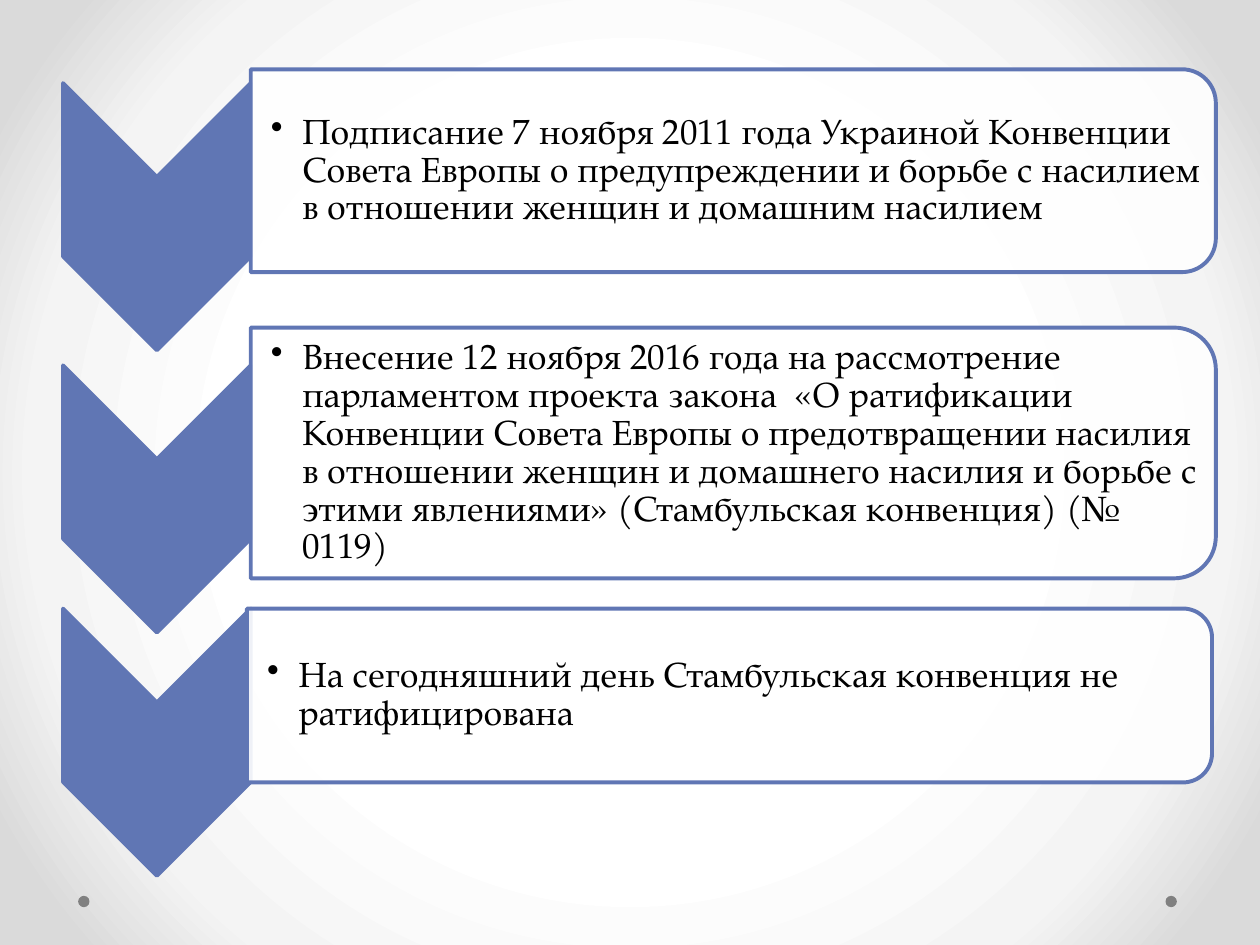
import math

from lxml import etree
from pptx import Presentation
from pptx.dml.color import RGBColor
from pptx.enum.shapes import MSO_SHAPE
from pptx.enum.text import MSO_ANCHOR, PP_ALIGN
from pptx.oxml import parse_xml
from pptx.oxml.ns import nsdecls, qn
from pptx.util import Inches, Pt

OVAL = MSO_SHAPE.OVAL
MIDDLE = MSO_ANCHOR.MIDDLE
LEFT = PP_ALIGN.LEFT

BLUE = RGBColor(0x60, 0x76, 0xB4)
WHITE = RGBColor(0xFF, 0xFF, 0xFF)
BLACK = RGBColor(0x00, 0x00, 0x00)
GREY = RGBColor(0x80, 0x80, 0x80)
BACKGROUND_STOPS = [(50, "FFFFFF"), (76, "F4F4F4"), (92, "DADADA")]
FONT = "TeX Gyre Pagella"

CHEVRON_LEFT, CHEVRON_WIDTH, CHEVRON_HEIGHT = 0.5, 1.49, 2.12
CARD_WIDTH = 7.66
ARC_STEPS = 16

# Chevron top, card left, card top, card height, card inset, text
STEPS = [
    (0.66, 1.99, 0.55, 1.61, 0.09,
     "Подписание 7 ноября 2011 года Украиной Конвенции Совета Европы "
     "о предупреждении и борьбе с насилием в отношении женщин и домашним насилием"),
    (2.9, 1.99, 2.6, 1.99, 0.11,
     "Внесение 12 ноября 2016 года на рассмотрение парламентом проекта закона  "
     "«О ратификации Конвенции Совета Европы о предотвращении насилия "
     "в отношении женщин и домашнего насилия и борьбе с этими явлениями» "
     "(Стамбульская конвенция) (№ 0119)"),
    (4.83, 1.96, 4.83, 1.38, 0.08,
     "На сегодняшний день Стамбульская конвенция не ратифицирована"),
]


def set_background(page):
    stops = "".join(
        f'<a:gs pos="{position * 1000}"><a:srgbClr val="{color}"/></a:gs>'
        for position, color in BACKGROUND_STOPS)
    background = parse_xml(
        f'<p:bg {nsdecls("p", "a")}><p:bgPr><a:gradFill rotWithShape="1">'
        f'<a:gsLst>{stops}</a:gsLst><a:path path="circle">'
        '<a:fillToRect l="50000" t="50000" r="50000" b="50000"/></a:path>'
        '</a:gradFill><a:effectLst/></p:bgPr></p:bg>')
    page.element.cSld.insert(0, background)


def add_outline(page, points, fill):
    """Draw a closed outline through points given in inches."""
    corners = [(Inches(x), Inches(y)) for x, y in points]
    builder = page.shapes.build_freeform(*corners[0], scale=1.0)
    builder.add_line_segments(corners[1:], close=True)
    shape = builder.convert_to_shape()
    shape.shadow.inherit = False
    shape.fill.solid()
    shape.fill.fore_color.rgb = fill
    shape.line.color.rgb = BLUE
    shape.line.width = Pt(2.25)
    etree.SubElement(shape.line._get_or_add_ln(), qn("a:round"))
    return shape


def add_chevron(page, left, top, width, height):
    right, middle, notch = left + width, left + width / 2, width / 2
    bottom = top + height
    add_outline(page, [
        (right, top), (right, bottom - notch), (middle, bottom),
        (left, bottom - notch), (left, top), (middle, top + notch)], BLUE)


def add_card(page, left, top, width, height, inset, text):
    # Square corners on the left, round ones on the right
    radius = height / 6
    right, bottom = left + width, top + height
    angles = [math.pi / 2 * step / ARC_STEPS for step in range(ARC_STEPS + 1)]
    upper = [(right - radius + radius * math.sin(angle),
              top + radius - radius * math.cos(angle)) for angle in angles]
    lower = [(x, top + bottom - y) for x, y in reversed(upper)]
    card = add_outline(page, [(left, top), *upper, *lower, (left, bottom)], WHITE)
    color = card.fill._xPr.find(qn("a:solidFill"))[0]
    etree.SubElement(color, qn("a:alpha"), val="90000")

    # Bulleted text
    frame = card.text_frame
    frame.word_wrap = True
    frame.vertical_anchor = MIDDLE
    frame.margin_left = Inches(0.16)
    frame.margin_top = frame.margin_right = frame.margin_bottom = Inches(inset)
    para = frame.paragraphs[0]
    para.text = text
    para.level = 1
    para.alignment = LEFT
    para.line_spacing = 0.9
    properties = para._p.get_or_add_pPr()
    properties.set("marL", str(Inches(0.25)))
    properties.set("indent", str(-Inches(0.25)))
    after = etree.SubElement(properties, qn("a:spcAft"))
    etree.SubElement(after, qn("a:spcPct"), val="15000")
    etree.SubElement(properties, qn("a:buChar"), char="•")
    para.font.name = FONT
    para.font.size = Pt(20)
    para.font.color.rgb = BLACK


def add_dots(page, lefts, top, size):
    for left in lefts:
        dot = page.shapes.add_shape(
            OVAL, Inches(left), Inches(top), Inches(size), Inches(size))
        dot.shadow.inherit = False
        dot.fill.solid()
        dot.fill.fore_color.rgb = GREY
        dot.line.fill.background()


def main():
    deck = Presentation()
    deck.slide_width, deck.slide_height = Inches(10), Inches(7.5)
    page = deck.slides.add_slide(deck.slide_layouts[6])
    set_background(page)
    add_dots(page, (9.25, 0.62), 7.11, 0.09)
    for chevron_top, left, top, height, inset, text in STEPS:
        add_chevron(page, CHEVRON_LEFT, chevron_top, CHEVRON_WIDTH, CHEVRON_HEIGHT)
        add_card(page, left, top, CARD_WIDTH, height, inset, text)
    deck.save("out.pptx")


if __name__ == "__main__":
    main()
